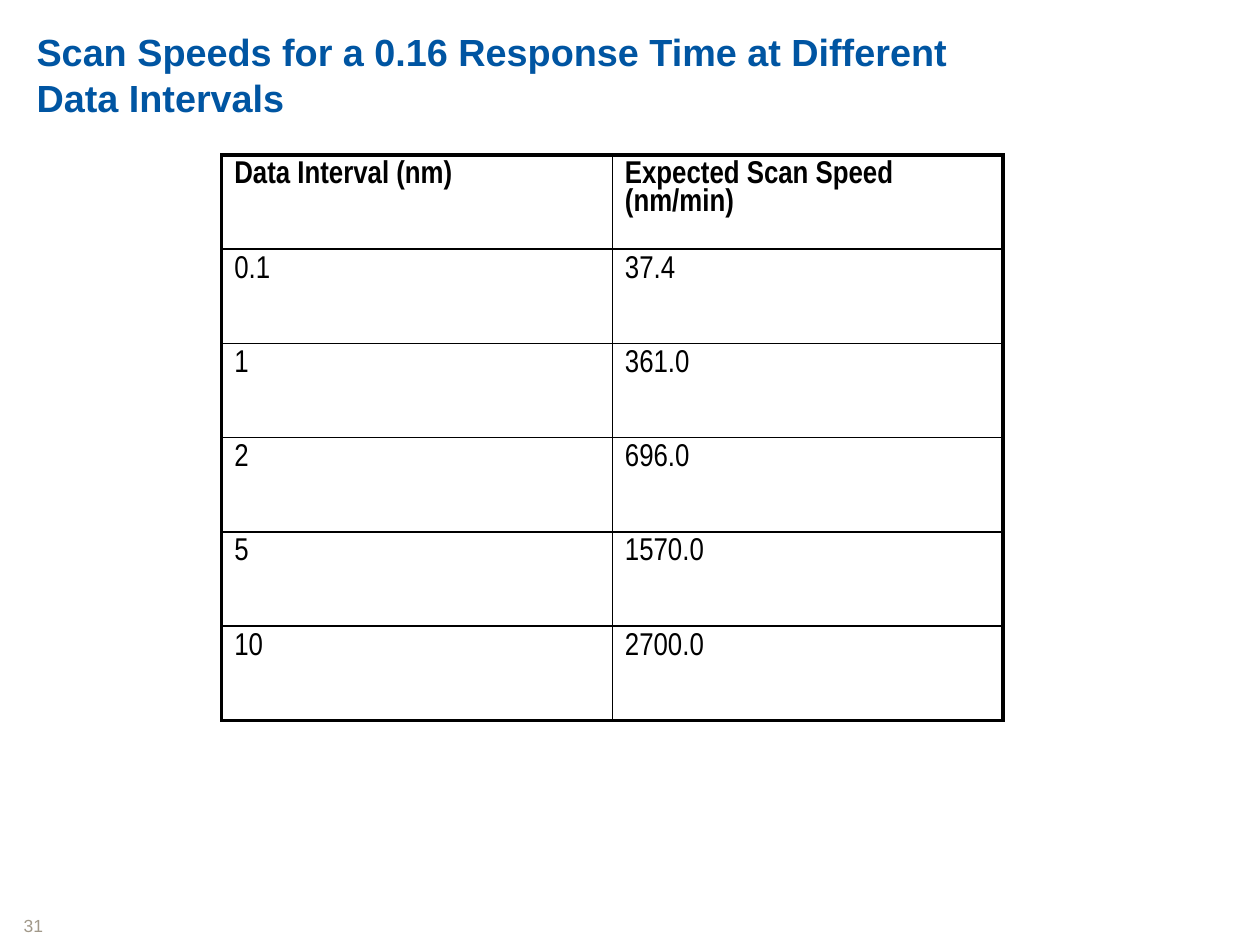
from pptx import Presentation
from pptx.dml.color import RGBColor
from pptx.enum.text import MSO_ANCHOR, MSO_AUTO_SIZE, PP_ALIGN
from pptx.oxml import parse_xml
from pptx.oxml.ns import nsdecls
from pptx.util import Inches, Pt

BLUE = RGBColor(0x00, 0x55, 0xA2)
GRAY = RGBColor(0xA2, 0x99, 0x8A)
BLACK = RGBColor(0x00, 0x00, 0x00)
LEFT, RIGHT = PP_ALIGN.LEFT, PP_ALIGN.RIGHT
BOTTOM = MSO_ANCHOR.BOTTOM
NO_FIT = MSO_AUTO_SIZE.NONE
THICK, THIN = Pt(2.25), Pt(1)

ROWS = [
    ("Data Interval (nm)", "Expected Scan Speed (nm/min)"),
    ("0.1", "37.4"),
    ("1", "361.0"),
    ("2", "696.0"),
    ("5", "1570.0"),
    ("10", "2700.0"),
]


class SlideBuilder:
    font = "Arial"
    table_font = "Arial Narrow"

    def __init__(self, prs):
        self.s = prs.slides.add_slide(prs.slide_layouts[5])

    def style(self, p, name, size, color, bold=False, align=LEFT):
        p.alignment = align
        f = p.font
        f.name, f.size, f.bold = name, Pt(size), bold
        f.color.rgb = color

    def title(self, text, x, y, w, h):
        sp = self.s.shapes.title
        sp.left, sp.top, sp.width, sp.height = map(Inches, (x, y, w, h))
        tf = sp.text_frame
        tf.text = text
        tf.word_wrap = True
        tf.auto_size = NO_FIT
        tf.vertical_anchor = BOTTOM
        tf.margin_left = tf.margin_right = Inches(0.04)
        tf.margin_top = tf.margin_bottom = Inches(0.02)
        self.style(tf.paragraphs[0], self.font, 21.6, BLUE, bold=True)

    def page_number(self, text, x, y, w, h):
        sp = self.s.shapes.add_textbox(*map(Inches, (x, y, w, h)))
        tf = sp.text_frame
        tf.text = text
        tf.word_wrap = True
        self.style(tf.paragraphs[0], self.font, 10, GRAY, align=RIGHT)

    def borders(self, cell, widths):
        # Border elements come before the fill in the cell properties
        tcPr = cell._tc.get_or_add_tcPr()
        for i, (side, width) in enumerate(widths.items()):
            tcPr.insert(i, parse_xml(
                f'<a:{side} {nsdecls("a")} w="{width}"><a:solidFill>'
                f'<a:srgbClr val="{BLACK}"/></a:solidFill></a:{side}>'))

    def table(self, rows, x, y, w, h):
        n_rows, n_cols = len(rows), len(rows[0])
        table = self.s.shapes.add_table(
            n_rows, n_cols, *map(Inches, (x, y, w, h))).table
        table.first_row = table.horz_banding = False
        for i, row in enumerate(rows):
            for j, text in enumerate(row):
                cell = table.cell(i, j)
                cell.text = text
                cell.fill.background()
                p = cell.text_frame.paragraphs[0]
                p.line_spacing = 0.95
                self.style(p, self.table_font, 18, BLACK, bold=i == 0)
                # Thick outer frame, thin inner grid
                self.borders(cell, {
                    "lnL": THICK if j == 0 else THIN,
                    "lnR": THICK if j == n_cols - 1 else THIN,
                    "lnT": THICK if i == 0 else THIN,
                    "lnB": THICK if i == n_rows - 1 else THIN,
                })


def main():
    prs = Presentation()
    prs.slide_width, prs.slide_height = Inches(10), Inches(7.5)
    slide = SlideBuilder(prs)

    # Heading and page number
    slide.title("Scan Speeds for a 0.16 Response Time at Different "
                "Data Intervals", 0.25, 0.5, 7.95, 0.47)
    slide.page_number("31", 0, 7.21, 0.44, 0.24)

    # Scan speed table
    slide.table(ROWS, 1.76, 1.23, 6.2, 4.49)

    prs.save("out.pptx")


if __name__ == "__main__":
    main()
